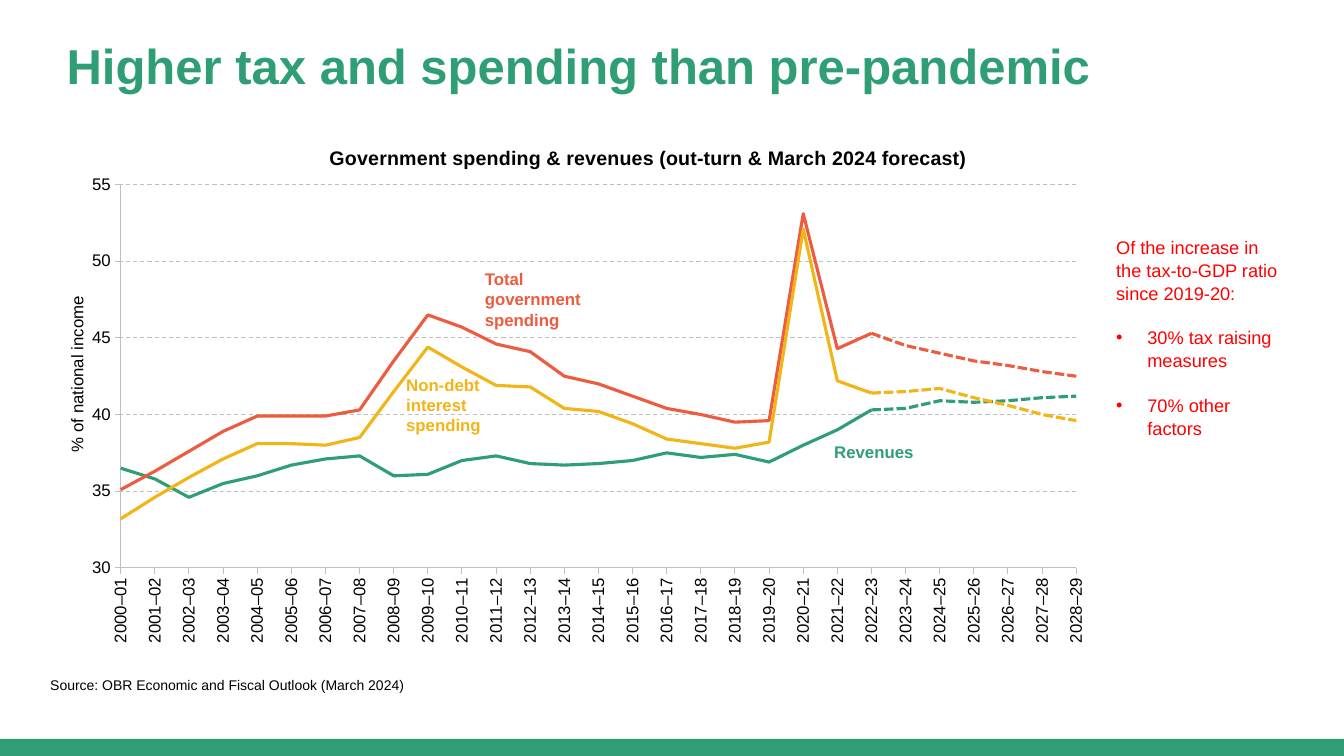
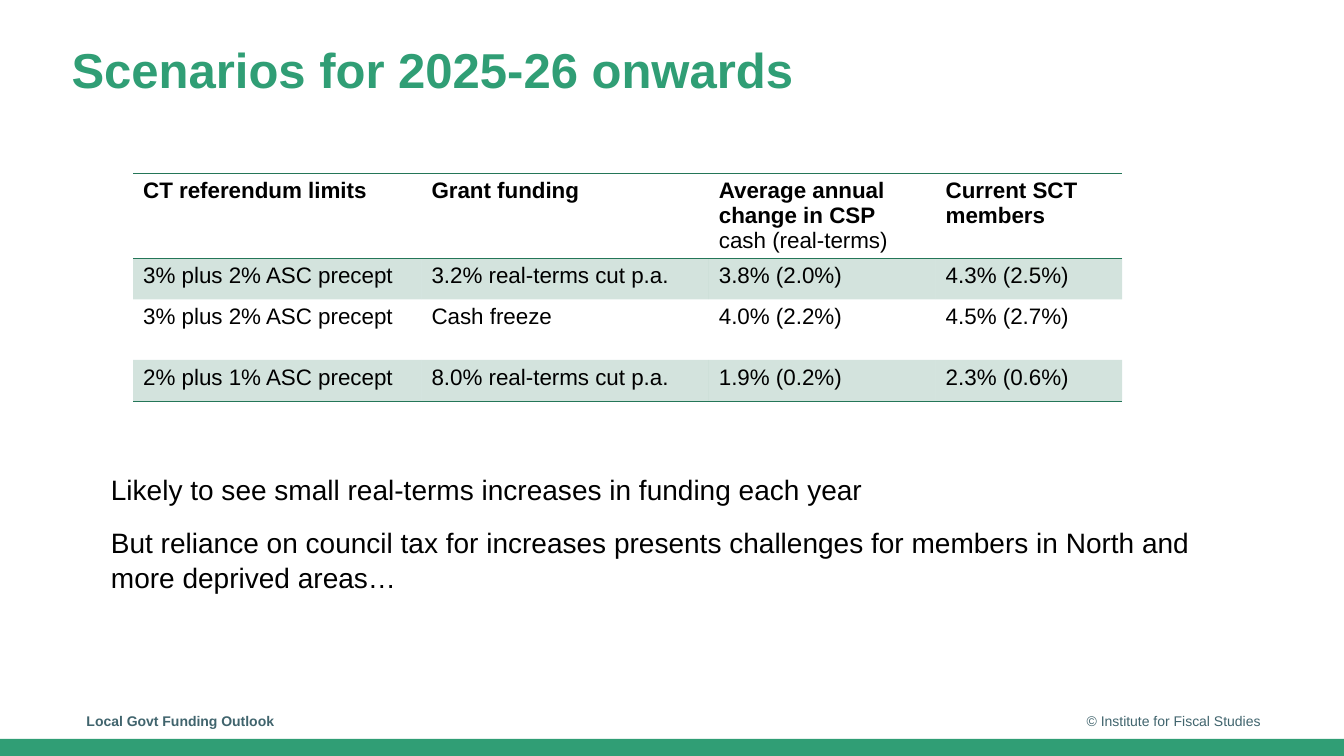
from dataclasses import dataclass
from typing import NamedTuple

from pptx import Presentation, oxml
from pptx import util as u
from pptx.chart.data import CategoryChartData
from pptx.dml.color import RGBColor
from pptx.enum import chart as charts
from pptx.enum import dml, shapes, text
from pptx.oxml import ns, xmlchemy


@dataclass(frozen=True)
class Theme:
    font: str = "Arial"
    green: str = "309E75"
    orange: str = "EB5C40"
    yellow: str = "F2B517"
    rule: str = "247658"
    footer: str = "40646D"
    axis: str = "BFBFBF"
    black: str = "000000"
    red: str = "FF0000"
    title_size: float = 35
    body_size: float = 20
    table_size: float = 16
    chart_title_size: float = 14
    aside_size: float = 13
    chart_size: float = 12
    small_size: float = 10


class Box(NamedTuple):
    left: float
    top: float
    width: float
    height: float

    def inner(self, left, top, width, height):
        return Box(self.left + left, self.top + top, width, height)

    def lengths(self):
        return [u.Inches(side) for side in self]


THEME = Theme()
NO_STYLE = "{2D5ABB26-0587-4C30-8999-92F81FD0307C}"
YEARS = [f"{year}–{(year + 1) % 100:02d}" for year in range(2000, 2029)]
TRENDS = [
    (THEME.green,
     [36.5, 35.8, 34.6, 35.5, 36, 36.7, 37.1, 37.3, 36, 36.1, 37, 37.3, 36.8, 36.7, 36.8, 37,
      37.5, 37.2, 37.4, 36.9, 38, 39, 40.3],
     [40.4, 40.9, 40.8, 40.9, 41.1, 41.2]),
    (THEME.orange,
     [35.1, 36.3, 37.6, 38.9, 39.9, 39.9, 39.9, 40.3, 43.5, 46.5, 45.7, 44.6, 44.1, 42.5, 42, 41.2,
      40.4, 40, 39.5, 39.6, 53.1, 44.3, 45.3],
     [44.5, 44, 43.5, 43.2, 42.8, 42.5]),
    (THEME.yellow,
     [33.2, 34.6, 35.9, 37.1, 38.1, 38.1, 38, 38.5, 41.5, 44.4, 43.1, 41.9, 41.8, 40.4, 40.2, 39.4,
      38.4, 38.1, 37.8, 38.2, 52.1, 42.2, 41.4],
     [41.5, 41.7, 41.1, 40.6, 40, 39.6]),
]
SCENARIOS = [
    ["CT referendum limits", "Grant funding",
     "Average annual change in CSP\ncash (real-terms)", "Current SCT members"],
    ["3% plus 2% ASC precept", "3.2% real-terms cut p.a.", "3.8% (2.0%)", "4.3% (2.5%)"],
    ["3% plus 2% ASC precept", "Cash freeze", "4.0% (2.2%)", "4.5% (2.7%)"],
    ["2% plus 1% ASC precept", "8.0% real-terms cut p.a.", "1.9% (0.2%)", "2.3% (0.6%)"],
]


def style(para, size, color, bold=False):
    para.font.name = THEME.font
    para.font.size = u.Pt(size)
    para.font.bold = bold
    para.font.color.rgb = RGBColor.from_string(color)


def add_text(page, box, words, size, color, bold=False,
             align=text.PP_ALIGN.LEFT, anchor=text.MSO_ANCHOR.TOP):
    frame = page.shapes.add_textbox(*box.lengths()).text_frame
    frame.word_wrap = True
    frame.vertical_anchor = anchor
    para = frame.paragraphs[0]
    para.text = words
    para.alignment = align
    style(para, size, color, bold)


def place(holder, box):
    holder.left, holder.top, holder.width, holder.height = box.lengths()
    holder.text_frame.auto_size = text.MSO_AUTO_SIZE.NONE
    return holder.text_frame


def fill_title(page, box, words):
    frame = place(page.shapes.title, box)
    frame.vertical_anchor = text.MSO_ANCHOR.MIDDLE
    frame.text = words
    para = frame.paragraphs[0]
    para.alignment = text.PP_ALIGN.LEFT
    para.line_spacing = 0.9
    style(para, THEME.title_size, THEME.green, True)


def fill_body(page, box, lines, size, color, gap, bullets_from=None):
    frame = place(page.placeholders[1], box)
    frame.vertical_anchor = text.MSO_ANCHOR.TOP
    frame.text = "\n".join(lines)
    for index, para in enumerate(frame.paragraphs):
        bulleted = bullets_from is not None and index >= bullets_from
        indent = u.Inches(0.31) if bulleted else 0
        para.line_spacing = 1.05
        para.space_before = u.Pt(gap if index else 0)
        para.space_after = u.Pt(0)
        settings = para._p.get_or_add_pPr()
        settings.set("marL", str(indent))
        settings.set("indent", str(-indent))
        bullet = xmlchemy.OxmlElement("a:buChar" if bulleted else "a:buNone")
        if bulleted:
            bullet.set("char", "•")
        settings.append(bullet)
        style(para, size, color)


def set_layout(part, x, y, width=None, height=None):
    old = part.find(ns.qn("c:layout"))
    if old is not None:
        part.remove(old)
    values = {"xMode": "edge", "yMode": "edge", "x": x, "y": y}
    if width is not None:
        values = {"layoutTarget": "inner", **values, "w": width, "h": height}
    layout = xmlchemy.OxmlElement("c:layout")
    manual = xmlchemy.OxmlElement("c:manualLayout")
    layout.append(manual)
    for name, value in values.items():
        item = xmlchemy.OxmlElement(f"c:{name}")
        item.set("val", str(value))
        manual.append(item)
    words = part.find(ns.qn("c:tx"))
    if words is None:
        part.insert(0, layout)
    else:
        words.addnext(layout)


def write_chart_title(title, words, size, bold, x, y):
    title.text_frame.text = words
    style(title.text_frame.paragraphs[0], size, THEME.black, bold)
    set_layout(title._element, x, y)


def format_line(line, color, width, dash=None):
    line.color.rgb = RGBColor.from_string(color)
    line.width = u.Pt(width)
    if dash is not None:
        line.dash_style = dash


def format_axes(chart):
    years, share = chart.category_axis, chart.value_axis
    for axis in (years, share):
        axis.major_tick_mark = charts.XL_TICK_MARK.OUTSIDE
        axis.minor_tick_mark = charts.XL_TICK_MARK.NONE
        format_line(axis.format.line, THEME.axis, 0.75)
        style(axis.tick_labels, THEME.chart_size, THEME.black)
    years.has_major_gridlines = False
    years._element.find(ns.qn("c:txPr")).find(ns.qn("a:bodyPr")).set("rot", "-5400000")
    share.minimum_scale, share.maximum_scale, share.major_unit = 30, 55, 5
    share.tick_labels.number_format = "General"
    share.tick_labels.number_format_is_linked = False
    format_line(share.major_gridlines.format.line, THEME.axis, 0.75, dml.MSO_LINE.DASH)
    write_chart_title(share.axis_title, "% of national income", THEME.chart_size, False, 0.007, 0.288)
    for old in share._element.findall(ns.qn("c:crossBetween")):
        share._element.remove(old)
    between = xmlchemy.OxmlElement("c:crossBetween")
    between.set("val", "midCat")
    share._element.find(ns.qn("c:crosses")).addnext(between)


def add_trend_chart(page, box):
    data = CategoryChartData()
    data.categories = YEARS
    for index, (_, actual, forecast) in enumerate(TRENDS):
        data.add_series(f"Series {2 * index + 1}", actual + [None] * len(forecast))
        data.add_series(f"Series {2 * index + 2}",
                        [None] * (len(actual) - 1) + actual[-1:] + forecast)
    chart = page.shapes.add_chart(charts.XL_CHART_TYPE.LINE, *box.lengths(), data).chart
    chart.has_legend = False
    chart.font.name = THEME.font
    chart.font.size = u.Pt(THEME.chart_size)
    chart.font.color.rgb = RGBColor.from_string(THEME.black)
    chart.has_title = True
    write_chart_title(chart.chart_title,
                      "Government spending & revenues (out-turn & March 2024 forecast)",
                      THEME.chart_title_size, True, 0.26, 0.01)
    set_layout(chart._chartSpace.chart.plotArea, 0.062, 0.089, 0.922, 0.703)
    format_axes(chart)
    chart.plots[0].vary_by_categories = False
    for index, series in enumerate(chart.plots[0].series):
        series.smooth = False
        series.marker.style = charts.XL_MARKER_STYLE.NONE
        dash = dml.MSO_LINE.SQUARE_DOT if index % 2 else dml.MSO_LINE.SOLID
        format_line(series.format.line, TRENDS[index // 2][0], 2.25, dash)
    labels = [
        ("Revenues", (7.3, 2.98, 1.3, 0.51), THEME.green, text.PP_ALIGN.RIGHT),
        ("Total government spending", (4.15, 1.27, 1.22, 0.34), THEME.orange, text.PP_ALIGN.LEFT),
        ("Non-debt interest spending", (3.37, 2.32, 1.22, 0.34), THEME.yellow, text.PP_ALIGN.LEFT),
    ]
    for words, offset, color, align in labels:
        add_text(page, box.inner(*offset), words, THEME.chart_size, color, True, align)


def add_border(cell, side, position):
    border = oxml.parse_xml(
        f'<a:{side} {ns.nsdecls("a")} w="12700"><a:solidFill>'
        f'<a:srgbClr val="{THEME.rule}"/></a:solidFill></a:{side}>')
    cell._tc.get_or_add_tcPr().insert(position, border)


def fill_cell(cell, words, row, last):
    cell.text = words
    for index, para in enumerate(cell.text_frame.paragraphs):
        style(para, THEME.table_size, THEME.black, row == 0 and index == 0)
    if row % 2:
        cell.fill.solid()
        cell.fill.fore_color.rgb = RGBColor.from_string(THEME.rule)
        alpha = xmlchemy.OxmlElement("a:alpha")
        alpha.set("val", "20000")
        next(cell._tc.tcPr.iter(ns.qn("a:srgbClr"))).append(alpha)
    else:
        cell.fill.background()
    sides = ["lnT", "lnB"] if row == 0 else ["lnB"] if row == last else []
    for position, side in enumerate(sides):
        add_border(cell, side, position)


def add_scenario_table(page, box):
    last = len(SCENARIOS) - 1
    table = page.shapes.add_table(len(SCENARIOS), len(SCENARIOS[0]), *box.lengths()).table
    table.first_row = table.horz_banding = False
    table._tbl.tblPr.find(ns.qn("a:tableStyleId")).text = NO_STYLE
    for column, width in zip(table.columns, (2.86, 2.85, 2.25, 1.85)):
        column.width = u.Inches(width)
    for row, height in enumerate((0.84, 0.41, 0.6, 0.41)):
        table.rows[row].height = u.Inches(height)
        for column, words in enumerate(SCENARIOS[row]):
            fill_cell(table.cell(row, column), words, row, last)


def add_footer(page, box):
    half = box.width - 3
    middle = text.MSO_ANCHOR.MIDDLE
    add_text(page, box.inner(0, 0, half, box.height), "Local Govt Funding Outlook",
             THEME.small_size, THEME.footer, True, anchor=middle)
    add_text(page, box.inner(half, 0, 3, box.height), "© Institute for Fiscal Studies",
             THEME.small_size, THEME.footer, align=text.PP_ALIGN.RIGHT, anchor=middle)


def add_master_band(deck, page, box):
    band = page.shapes.add_shape(shapes.MSO_SHAPE.RECTANGLE, *box.lengths())
    band.shadow.inherit = False
    band.fill.solid()
    band.fill.fore_color.rgb = RGBColor.from_string(THEME.green)
    band.line.fill.background()
    band._element.nvSpPr.cNvPr.set("id", "20")
    deck.slide_master.shapes._spTree.insert(2, band._element)


def build_trend_page(page):
    fill_title(page, Box(0.56, 0.37, 10.69, 0.63), "Higher tax and spending than pre-pandemic")
    add_trend_chart(page, Box(0.56, 1.35, 10.28, 5.41))
    fill_body(page, Box(10.97, 2.28, 1.85, 2.07),
              ["Of the increase in the tax-to-GDP ratio since 2019-20:",
               "30% tax raising measures", "70% other factors"],
              THEME.aside_size, THEME.red, 15.5, bullets_from=1)
    add_text(page, Box(0.4, 6.66, 8.77, 0.31),
             "Source: OBR Economic and Fiscal Outlook (March 2024)", THEME.small_size, THEME.black)


def build_scenario_page(page):
    fill_title(page, Box(0.61, 0.41, 8.05, 0.63), "Scenarios for 2025-26 onwards")
    add_scenario_table(page, Box(1.32, 1.72, 9.81, 2.26))
    fill_body(page, Box(1, 4.62, 11.34, 1.95),
              ["Likely to see small real-terms increases in funding each year",
               "But reliance on council tax for increases presents challenges for members in "
               "North and more deprived areas…"],
              THEME.body_size, THEME.black, 12.5)
    add_footer(page, Box(0.76, 6.95, 11.84, 0.4))


def main():
    deck = Presentation()
    deck.slide_width, deck.slide_height = u.Inches(13.33), u.Inches(7.5)
    pages = [deck.slides.add_slide(deck.slide_layouts[1]) for _ in range(2)]
    add_master_band(deck, pages[0], Box(0, 7.33, 13.33, 0.17))
    build_trend_page(pages[0])
    build_scenario_page(pages[1])
    deck.save("out.pptx")


if __name__ == "__main__":
    main()
